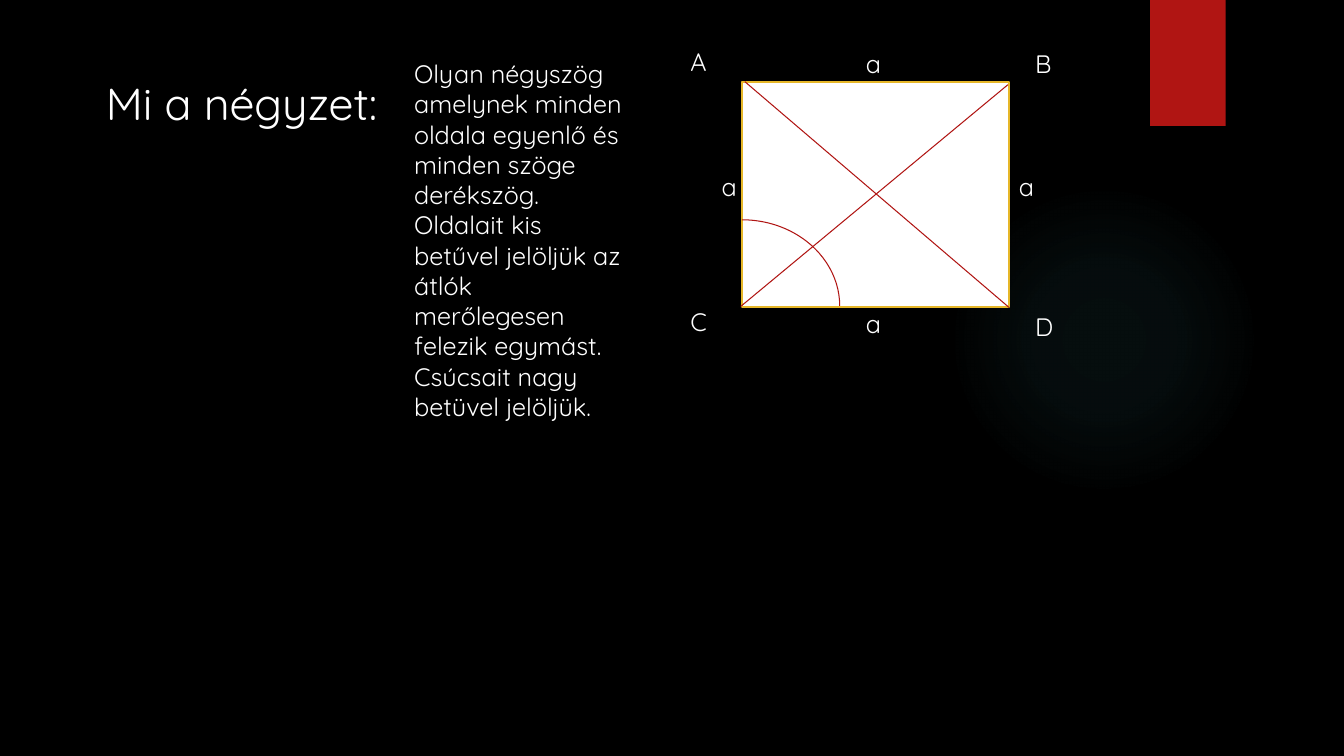
from lxml import etree
from pptx import Presentation
from pptx import util as u
from pptx.dml.color import RGBColor
from pptx.enum import shapes, text
from pptx.oxml import parse_xml
from pptx.oxml.ns import nsdecls, qn

W, H = u.Inches(13.333), u.Inches(7.5)
FONT = "Quicksand"
BLACK = RGBColor(0x00, 0x00, 0x00)
WHITE = RGBColor(0xFF, 0xFF, 0xFF)
RED = RGBColor(0xB0, 0x15, 0x13)
GOLD = RGBColor(0xE6, 0xB7, 0x29)
TEAL = RGBColor(0x50, 0xB9, 0xC1)
GLOW_STOPS = [(0, 7), (36, 6), (69, 0)]

DEFINITION = (
    "Olyan négyszög amelynek minden oldala egyenlő és minden szöge derékszög. "
    "Oldalait kis betűvel jelöljük az átlók merőlegesen felezik egymást. "
    "Csúcsait nagy betüvel jelöljük."
)
SIDES = [(52.95, 22), (63.68, 5.73), (75.08, 22), (63.68, 40.13)]
CORNERS = {"A": (50.62, 5.47), "B": (76.28, 5.73),
           "C": (50.62, 39.87), "D": (76.28, 40.53)}
DIAGONALS = [(55.42, 10.8, 75.08, 40.67), (75, 11.2, 55.12, 40.53)]


def share(x, y, *rest):
    """Turn percentages of the slide's width and height into lengths."""
    return [int(v * (H if i % 2 else W) / 100)
            for i, v in enumerate((x, y, *rest))]


def add_figure(s, kind, box, fill=None, line=None, width=0.75):
    sp = s.shapes.add_shape(kind, *share(*box))
    sp.shadow.inherit = False
    if fill is None:
        sp.fill.background()
    else:
        sp.fill.solid()
        sp.fill.fore_color.rgb = fill
    if line is None:
        sp.line.fill.background()
    else:
        sp.line.color.rgb = line
        sp.line.width = u.Pt(width)
    return sp


def add_glow(s, box):
    sp = add_figure(s, shapes.MSO_SHAPE.OVAL, box)
    stops = "".join(
        f'<a:gs pos="{pos * 1000}"><a:srgbClr val="{TEAL}">'
        f'<a:alpha val="{alpha * 1000}"/></a:srgbClr></a:gs>'
        for pos, alpha in GLOW_STOPS)
    gradient = parse_xml(
        f'<a:gradFill {nsdecls("a")} rotWithShape="1"><a:gsLst>{stops}</a:gsLst>'
        '<a:path path="circle"><a:fillToRect l="50000" t="50000" r="50000" b="50000"/>'
        '</a:path></a:gradFill>')
    props = sp.element.spPr
    props.replace(props.find(qn("a:noFill")), gradient)


def write(sp, words, size):
    tf = sp.text_frame
    tf.word_wrap = True
    tf.auto_size = text.MSO_AUTO_SIZE.NONE
    tf.vertical_anchor = text.MSO_ANCHOR.TOP
    tf.text = words
    p = tf.paragraphs[0]
    p.alignment = text.PP_ALIGN.LEFT
    p.font.name = FONT
    p.font.size = u.Pt(size)
    p.font.color.rgb = WHITE


def add_title(s, words, box):
    sp = s.shapes.title
    sp.left, sp.top, sp.width, sp.height = share(*box)
    write(sp, words, 32)


def add_text(s, words, box):
    write(s.shapes.add_textbox(*share(*box)), words, 18)


def add_label(s, words, place):
    add_text(s, words, (*place, 6.15, 5.33))


def add_diagonal(s, ends):
    line = s.shapes.add_connector(shapes.MSO_CONNECTOR.STRAIGHT, *share(*ends))
    line.line.color.rgb = RED
    line.line.width = u.Pt(0.75)
    etree.SubElement(line.element.spPr, qn("a:effectLst"))


def main():
    prs = Presentation()
    prs.slide_width, prs.slide_height = W, H
    s = prs.slides.add_slide(prs.slide_layouts[5])
    s.background.fill.solid()
    s.background.fill.fore_color.rgb = BLACK

    add_glow(s, (70.58, 24.4, 23.1, 41.07))
    add_figure(s, shapes.MSO_SHAPE.RECTANGLE, (85.58, 0, 5.62, 16.67), fill=RED)
    add_title(s, "Mi a négyzet:", (7.12, 9.33, 35.1, 8.53))
    add_text(s, DEFINITION, (30.08, 7.07, 17.1, 50))

    add_figure(s, shapes.MSO_SHAPE.RECTANGLE, (55.2, 10.8, 19.88, 29.87),
               fill=WHITE, line=GOLD, width=1.5)
    add_figure(s, shapes.MSO_SHAPE.ARC, (47.93, 29.07, 14.55, 22.8), line=RED)
    for ends in DIAGONALS:
        add_diagonal(s, ends)
    for place in SIDES:
        add_label(s, "a", place)
    for corner, place in CORNERS.items():
        add_label(s, corner, place)

    prs.save("out.pptx")


if __name__ == "__main__":
    main()
